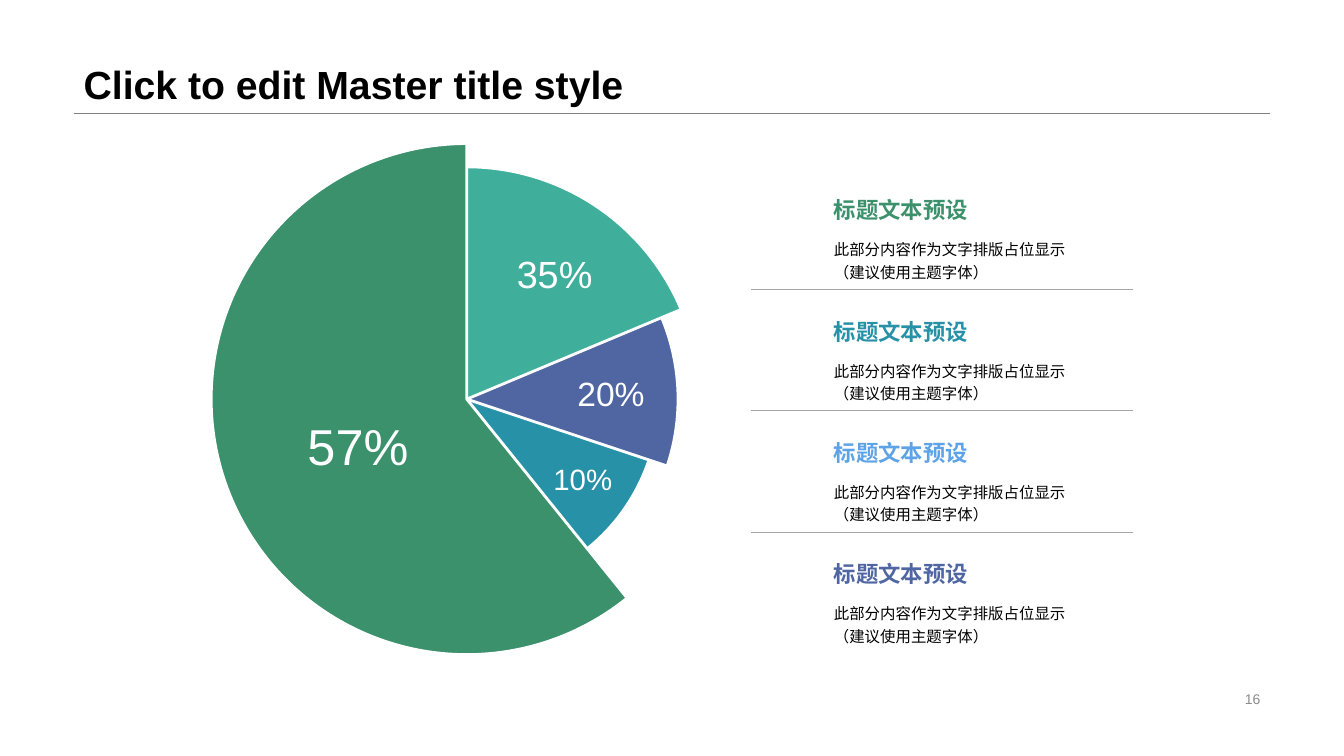
from lxml import etree
from pptx import Presentation
from pptx.dml.color import RGBColor
from pptx.enum.shapes import MSO_CONNECTOR, MSO_SHAPE
from pptx.enum.text import MSO_ANCHOR, PP_ALIGN
from pptx.oxml.ns import qn
from pptx.util import Inches, Pt

LEFT, CENTER, RIGHT = PP_ALIGN.LEFT, PP_ALIGN.CENTER, PP_ALIGN.RIGHT
TOP, MIDDLE, BOTTOM = MSO_ANCHOR.TOP, MSO_ANCHOR.MIDDLE, MSO_ANCHOR.BOTTOM
PIE, STRAIGHT = MSO_SHAPE.PIE, MSO_CONNECTOR.STRAIGHT
FONT = "Arial"

# Content
COLORS = {
    "green": "3A916B", "teal": "3FAF9C", "indigo": "5066A2",
    "cyan": "2691A7", "sky": "5EA3E7", "white": "FFFFFF", "black": "000000",
    "rule": "808080", "divider": "A6A6A6", "number": "8C8C8C",
}
TITLE = "Click to edit Master title style"
PAGE = "16"
# Diameter, start and end angle in degrees clockwise from the right
SLICES = [
    (3.81, 208.03, 131.55, "cyan"),
    (4.19, 90.76, 18.46, "indigo"),
    (4.61, 90.76, 337.28, "teal"),
    (5.07, 51.15, 270, "green"),
]
# Text, left, top, width, size
PERCENTS = [
    ("57%", 2.71, 4.09, 1.68, 36),
    ("35%", 4.94, 2.39, 1.12, 27),
    ("20%", 5.5, 3.57, 1.12, 24),
    ("10%", 5.22, 4.42, 1.12, 21),
]
HEADING = "标题文本预设"
DETAIL = ["此部分内容作为文字排版占位显示", "（建议使用主题字体）"]
ITEM_COLORS = ["green", "cyan", "sky", "indigo"]

# Layout
PIE_X, PIE_Y = 4.63, 3.96
ITEM_X, ITEM_W = 8.27, 2.32
FIRST_Y, LAST_Y = 1.95, 5.56
HEADING_H, DETAIL_H = 0.4, 0.52

prs = Presentation()
prs.slide_width, prs.slide_height = Inches(13.33), Inches(7.5)
s = prs.slides.add_slide(prs.slide_layouts[5])


def rgb(name):
    return RGBColor.from_string(COLORS[name])


def write(tf, lines, size, color, bold=False, align=LEFT, spacing=None):
    p = tf.paragraphs[0]
    p.alignment = align
    if spacing:
        p.line_spacing = spacing
    for i, line in enumerate(lines):
        if i:
            p.add_line_break()
        r = p.add_run()
        r.text = line
        r.font.name, r.font.size, r.font.bold = FONT, Pt(size), bold
        r.font.color.rgb = rgb(color)


def add_text(box, lines, size, color, anchor=TOP, wrap=False, inset=0, **style):
    tf = s.shapes.add_textbox(*map(Inches, box)).text_frame
    tf.word_wrap, tf.vertical_anchor = wrap, anchor
    tf.margin_left = tf.margin_right = Inches(inset)
    tf.margin_top = tf.margin_bottom = 0
    write(tf, lines, size, color, **style)


def add_rule(x1, x2, y, color, width):
    line = s.shapes.add_connector(
        STRAIGHT, Inches(x1), Inches(y), Inches(x2), Inches(y))
    line.line.color.rgb, line.line.width = rgb(color), Pt(width)
    etree.SubElement(line._element.spPr, qn("a:effectLst"))


# Title, rule and page number
add_rule(0.73, 12.6, 1.12, "rule", 0.25)
title = s.shapes.title
title.left, title.top = Inches(0.73), Inches(0)
title.width, title.height = Inches(11.87), Inches(1.12)
title.text_frame.vertical_anchor = BOTTOM
title.text_frame.word_wrap = True
write(title.text_frame, [TITLE], 28, "black", bold=True, spacing=0.9)
add_text((9.42, 6.82, 3.18, 0.23), [PAGE], 10, "number",
         anchor=MIDDLE, wrap=True, inset=0.1, align=RIGHT)

# Concentric pie slices, smallest at the back
for size, start, end, color in SLICES:
    sp = s.shapes.add_shape(PIE, Inches(PIE_X - size / 2), Inches(PIE_Y - size / 2),
                            Inches(size), Inches(size))
    sp.shadow.inherit = False
    sp.fill.solid()
    sp.fill.fore_color.rgb = rgb(color)
    sp.line.color.rgb, sp.line.width = rgb("white"), Pt(2)
    # One degree is 60000 units, and an adjustment of 1 is 100000 units
    sp.adjustments[0], sp.adjustments[1] = start * 0.6, end * 0.6

for text, x, y, w, size in PERCENTS:
    add_text((x, y, w, 0.65), [text], size, "white", anchor=MIDDLE, align=CENTER)

# Text items with dividers between them
step = (LAST_Y - FIRST_Y) / (len(ITEM_COLORS) - 1)
for i, color in enumerate(ITEM_COLORS):
    y = FIRST_Y + i * step
    detail_y = y + HEADING_H
    if i < len(ITEM_COLORS) - 1:
        add_rule(7.45, 11.24, detail_y + DETAIL_H, "divider", 0.5)
    add_text((ITEM_X, detail_y, ITEM_W, DETAIL_H), DETAIL, 11, "black",
             wrap=True, spacing=1.2)
    add_text((ITEM_X, y, ITEM_W, HEADING_H), [HEADING], 16, color, bold=True)

prs.save("out.pptx")
